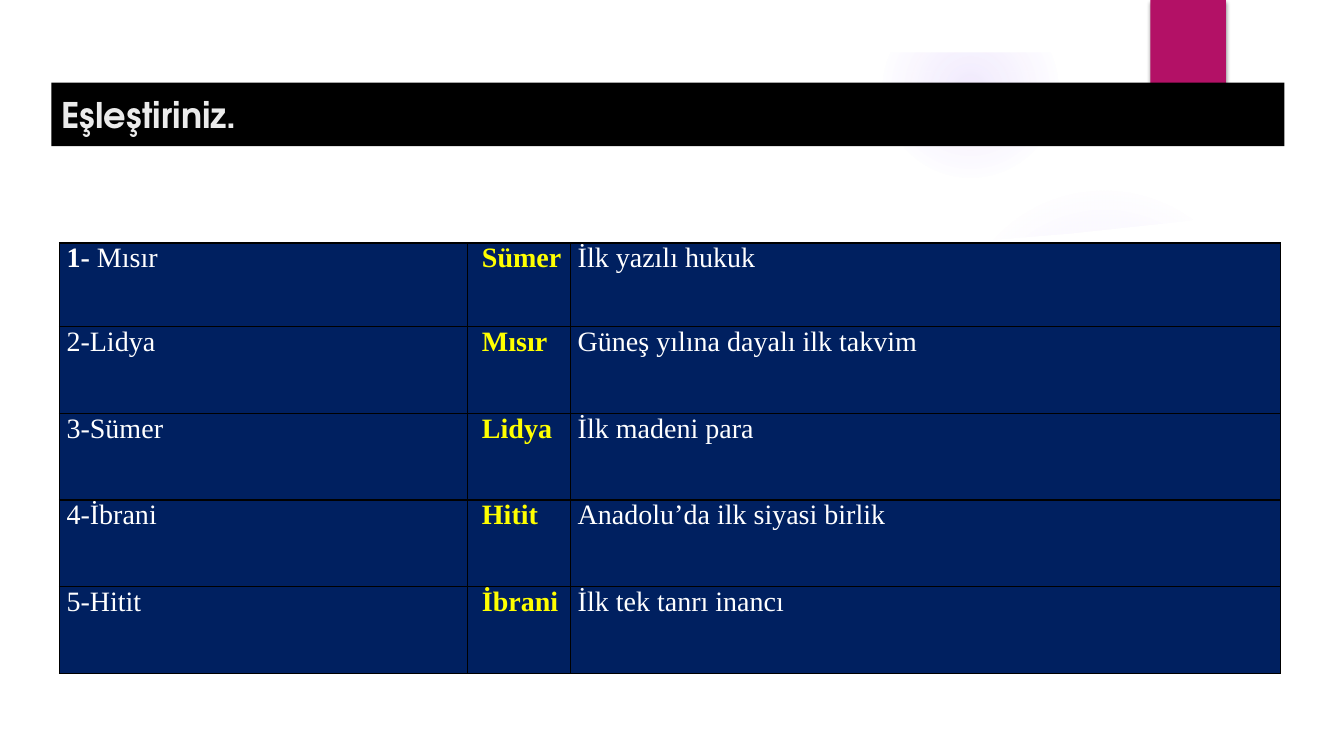
import pptx
import pptx.dml.color
import pptx.enum.shapes
import pptx.enum.text
import pptx.oxml
import pptx.oxml.ns
import pptx.util
from pptx.util import Inches

COLORS = {
    "white": "FFFFFF", "black": "000000", "title": "EBEBEB", "navy": "002060",
    "answer": "FFFF00", "tag": "B31166", "glow": "9B6BF2",
}
NAMESPACE = pptx.oxml.ns.nsdecls("a")
PANEL_EDGE = [
    (0.5, 2.04), (1.59, 2.18), (2.83, 2.3), (4.01, 2.38), (5.35, 2.45), (6.82, 2.48),
    (8.4, 2.46), (9.49, 2.41), (10.6, 2.32), (11.72, 2.2), (12.84, 2.04),
]
MATCHES = [
    ("1- Mısır", "Sümer", "İlk yazılı hukuk"),
    ("2-Lidya", "Mısır", "Güneş yılına dayalı ilk takvim"),
    ("3-Sümer", "Lidya", "İlk madeni para"),
    ("4-İbrani", "Hitit", "Anadolu’da ilk siyasi birlik"),
    ("5-Hitit", "İbrani", "İlk tek tanrı inancı"),
]
COLUMN_WIDTHS = [4.05, 1.02, 7.04]
ROW_HEIGHTS = [0.83] + [0.86] * 4


def rgb(name):
    """Return the named colour."""
    return pptx.dml.color.RGBColor.from_string(COLORS[name])


def paint(shape, color):
    """Give a shape a plain fill with no line or shadow."""
    shape.fill.solid()
    shape.fill.fore_color.rgb = rgb(color)
    shape.line.fill.background()
    shape.shadow.inherit = False


def add_block(slide, left, top, width, height, color):
    """Add a plain rectangle."""
    block = slide.shapes.add_shape(
        pptx.enum.shapes.MSO_SHAPE.RECTANGLE,
        Inches(left), Inches(top), Inches(width), Inches(height))
    paint(block, color)
    return block


def add_glow(slide, left, top, size, stops):
    """Add a circle that fades outwards through (position, opacity) stops."""
    glow = slide.shapes.add_shape(
        pptx.enum.shapes.MSO_SHAPE.OVAL,
        Inches(left), Inches(top), Inches(size), Inches(size))
    glow.line.fill.background()
    glow.shadow.inherit = False
    stop_xml = "".join(
        f'<a:gs pos="{position * 1000}"><a:srgbClr val="{COLORS["glow"]}">'
        f'<a:alpha val="{opacity * 1000}"/></a:srgbClr></a:gs>'
        for position, opacity in stops)
    gradient = pptx.oxml.parse_xml(
        f'<a:gradFill {NAMESPACE}><a:gsLst>{stop_xml}</a:gsLst><a:path path="circle">'
        '<a:fillToRect l="50000" t="50000" r="50000" b="50000"/></a:path></a:gradFill>')
    glow._element.spPr.insert(2, gradient)


def add_panel(slide):
    """Add the white panel with its bowed upper edge."""
    builder = slide.shapes.build_freeform(
        Inches(PANEL_EDGE[0][0]), Inches(PANEL_EDGE[0][1]))
    corners = PANEL_EDGE[1:] + [(12.84, 7), (0.5, 7)]
    builder.add_line_segments([(Inches(x), Inches(y)) for x, y in corners], close=True)
    paint(builder.convert_to_shape(), "white")


def add_tag(slide):
    """Add the coloured tag with a soft shadow below it."""
    tag = add_block(slide, 11.41, 0, 0.75, 1.25, "tag")
    effects = tag._element.spPr.find(pptx.oxml.ns.qn("a:effectLst"))
    effects.append(pptx.oxml.parse_xml(
        f'<a:outerShdw {NAMESPACE} blurRad="38100" dist="25400" dir="5400000" '
        'rotWithShape="0"><a:srgbClr val="000000"><a:alpha val="45000"/>'
        '</a:srgbClr></a:outerShdw>'))


def style_run(run, font, size, color, bold):
    """Format one run."""
    run.font.name = font
    run.font.size = pptx.util.Pt(size)
    run.font.color.rgb = rgb(color)
    run.font.bold = bold


def set_title(slide, text):
    """Place the title bar in front of the decoration."""
    title = slide.shapes.title
    title.left, title.top = Inches(0.51), Inches(0.82)
    title.width, title.height = Inches(12.23), Inches(0.63)
    title.fill.solid()
    title.fill.fore_color.rgb = rgb("black")
    frame = title.text_frame
    frame.text = text
    frame.vertical_anchor = pptx.enum.text.MSO_ANCHOR.MIDDLE
    frame.paragraphs[0].alignment = pptx.enum.text.PP_ALIGN.LEFT
    style_run(frame.paragraphs[0].runs[0], "TeX Gyre Adventor", 25.2, "title", True)
    slide.shapes._spTree.append(title._element)


def add_borders(cell):
    """Draw thin black lines round a cell."""
    properties = cell._tc.get_or_add_tcPr()
    for index, side in enumerate(("lnL", "lnR", "lnT", "lnB")):
        properties.insert(index, pptx.oxml.parse_xml(
            f'<a:{side} {NAMESPACE} w="12700"><a:solidFill>'
            f'<a:srgbClr val="{COLORS["black"]}"/></a:solidFill></a:{side}>'))


def fill_cell(cell, text, is_answer):
    """Write and format one table cell."""
    cell.fill.solid()
    cell.fill.fore_color.rgb = rgb("navy")
    cell.margin_left = Inches(0.14 if is_answer else 0.07)
    cell.margin_right = Inches(0.03 if is_answer else 0.07)
    cell.margin_top = cell.margin_bottom = 0
    paragraph = cell.text_frame.paragraphs[0]
    number, space, name = text.partition("- ")
    parts = [(number + space, True), (name, False)] if space else [(text, is_answer)]
    for part, bold in parts:
        run = paragraph.add_run()
        run.text = part
        style_run(run, "Times New Roman", 20, "answer" if is_answer else "white", bold)
    add_borders(cell)


def add_matches(slide):
    """Add the matching table."""
    table = slide.shapes.add_table(
        len(MATCHES), len(COLUMN_WIDTHS), Inches(0.59), Inches(2.41),
        Inches(sum(COLUMN_WIDTHS)), Inches(sum(ROW_HEIGHTS))).table
    table.first_row = table.horz_banding = False
    for column, width in zip(table.columns, COLUMN_WIDTHS):
        column.width = Inches(width)
    for row, height, match in zip(table.rows, ROW_HEIGHTS, MATCHES):
        row.height = Inches(height)
        for index, text in enumerate(match):
            fill_cell(row.cells[index], text, index == 1)


def main():
    """Build the matching exercise slide."""
    deck = pptx.Presentation()
    deck.slide_width, deck.slide_height = Inches(13.33), Inches(7.5)
    slide = deck.slides.add_slide(deck.slide_layouts[5])
    add_glow(slide, 9.41, 1.83, 3.08, [(0, 7), (36, 6), (69, 0)])
    add_glow(slide, 8.75, 0.01, 1.75, [(0, 14), (36, 7), (73, 0)])
    add_panel(slide)
    add_block(slide, 0, 0, 13.33, 0.52, "white")
    add_tag(slide)
    set_title(slide, "Eşleştiriniz.")
    add_matches(slide)
    deck.save("out.pptx")


if __name__ == "__main__":
    main()
